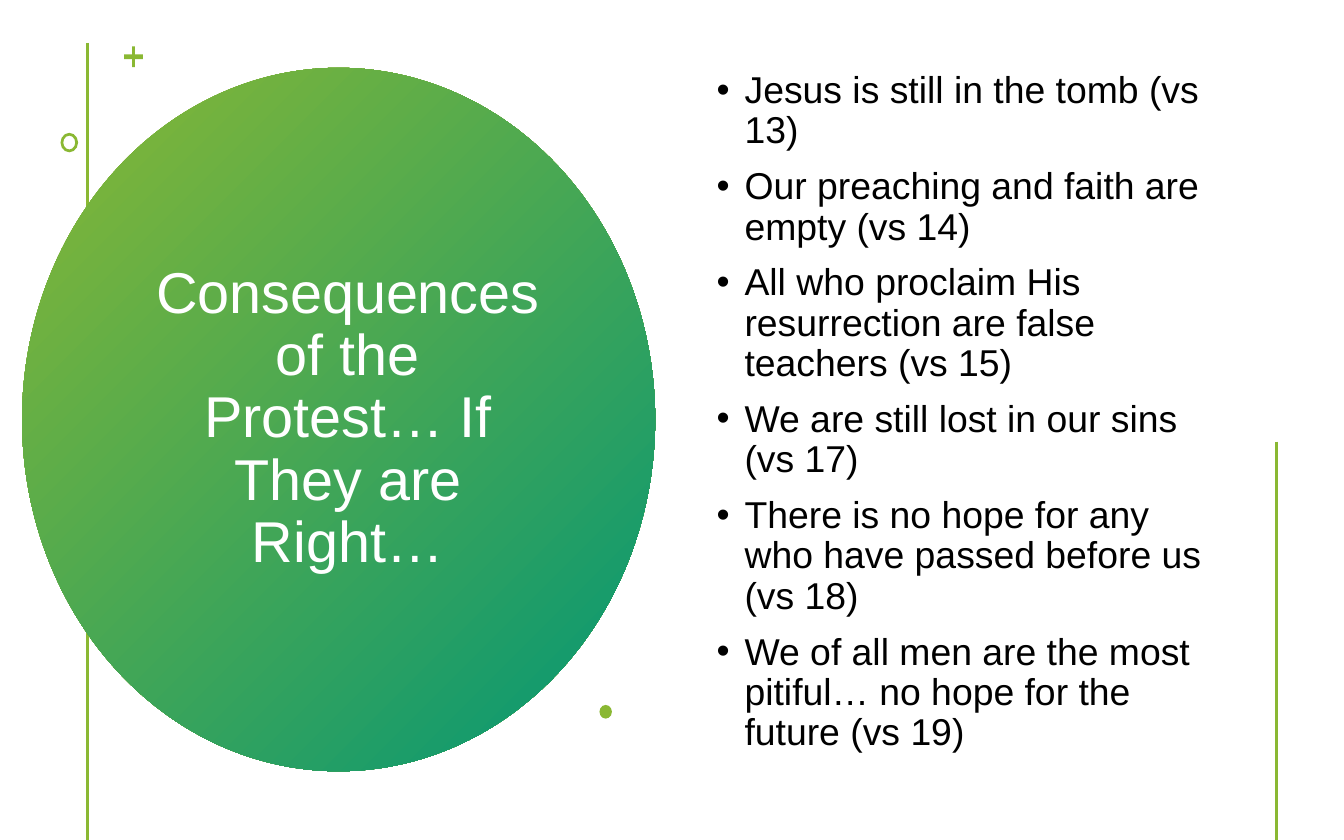
from lxml import etree
from pptx import Presentation
from pptx.dml.color import RGBColor
from pptx.enum.shapes import MSO_CONNECTOR, MSO_SHAPE
from pptx.enum.text import MSO_ANCHOR, MSO_AUTO_SIZE, PP_ALIGN
from pptx.oxml.ns import qn
from pptx.util import Pt

GREEN = RGBColor(0x8A, 0xB8, 0x33)
TEAL = RGBColor(0x02, 0x96, 0x76)
WHITE = RGBColor(0xFF, 0xFF, 0xFF)
BLACK = RGBColor(0x00, 0x00, 0x00)
FONT = "Arial"

CONSEQUENCES = [
    "Jesus is still in the tomb (vs 13)",
    "Our preaching and faith are empty (vs 14)",
    "All who proclaim His resurrection are false teachers (vs 15)",
    "We are still lost in our sins (vs 17)",
    "There is no hope for any who have passed before us (vs 18)",
    "We of all men are the most pitiful… no hope for the future (vs 19)",
]


def add_solid(kind, left, top, width, height):
    shape = slide.shapes.add_shape(kind, Pt(left), Pt(top), Pt(width), Pt(height))
    shape.shadow.inherit = False
    shape.fill.solid()
    shape.fill.fore_color.rgb = GREEN
    shape.line.fill.background()
    return shape


def format_paragraph(paragraph, size, color):
    paragraph.line_spacing = 0.9
    font = paragraph.runs[0].font
    font.name = FONT
    font.size = Pt(size)
    font.color.rgb = color


presentation = Presentation()
presentation.slide_width = Pt(864)
presentation.slide_height = Pt(540)
slide = presentation.slides.add_slide(presentation.slide_layouts[5])

# Vertical accent lines, running to the bottom edge
for x, top in ((56.2, 27.6), (820.8, 284)):
    line = slide.shapes.add_connector(MSO_CONNECTOR.STRAIGHT, Pt(x), Pt(top), Pt(x), Pt(540))
    line.line.color.rgb = GREEN
    line.line.width = Pt(2)
    etree.SubElement(line.element.spPr, qn("a:effectLst"))

# Gradient circle behind the title
circle = add_solid(MSO_SHAPE.OVAL, 14.2, 43.6, 407, 452.2)
circle.fill.gradient()
circle.fill.gradient_angle = 315
for stop, position, color in zip(circle.fill.gradient_stops, (0, 1), (GREEN, TEAL)):
    stop.position = position
    stop.color.rgb = color

# Small ornaments: plus, ring and dot
plus = add_solid(MSO_SHAPE.CROSS, 79.8, 29.8, 12, 13.4)
plus.adjustments[0] = 0.43
ring = add_solid(MSO_SHAPE.DONUT, 38.9, 85.4, 11.3, 12.5)
ring.adjustments[0] = 0.16
add_solid(MSO_SHAPE.OVAL, 385.4, 453.2, 8, 8.8)

# Title, brought in front of the circle
title = slide.shapes.title
slide.shapes.element.append(title.element)
title.left, title.top, title.width, title.height = Pt(88.6), Pt(101.5), Pt(270), Pt(336)
frame = title.text_frame
frame.text = "Consequences of the Protest… If They are Right…"
frame.word_wrap = True
frame.auto_size = MSO_AUTO_SIZE.NONE
frame.vertical_anchor = MSO_ANCHOR.MIDDLE
frame.paragraphs[0].alignment = PP_ALIGN.CENTER
format_paragraph(frame.paragraphs[0], 37, WHITE)

# Bulleted consequences
body = slide.shapes.add_textbox(Pt(453.6), Pt(30.2), Pt(332), Pt(470))
frame = body.text_frame
frame.word_wrap = True
frame.vertical_anchor = MSO_ANCHOR.MIDDLE
frame.text = "\n".join(CONSEQUENCES)
for paragraph in frame.paragraphs:
    format_paragraph(paragraph, 24, BLACK)
    paragraph.space_before = Pt(10)
    properties = paragraph._p.get_or_add_pPr()
    properties.set("marL", str(Pt(18)))
    properties.set("indent", str(Pt(-18)))
    etree.SubElement(properties, qn("a:buFont"), typeface=FONT)
    etree.SubElement(properties, qn("a:buChar"), char="•")

presentation.save("out.pptx")
